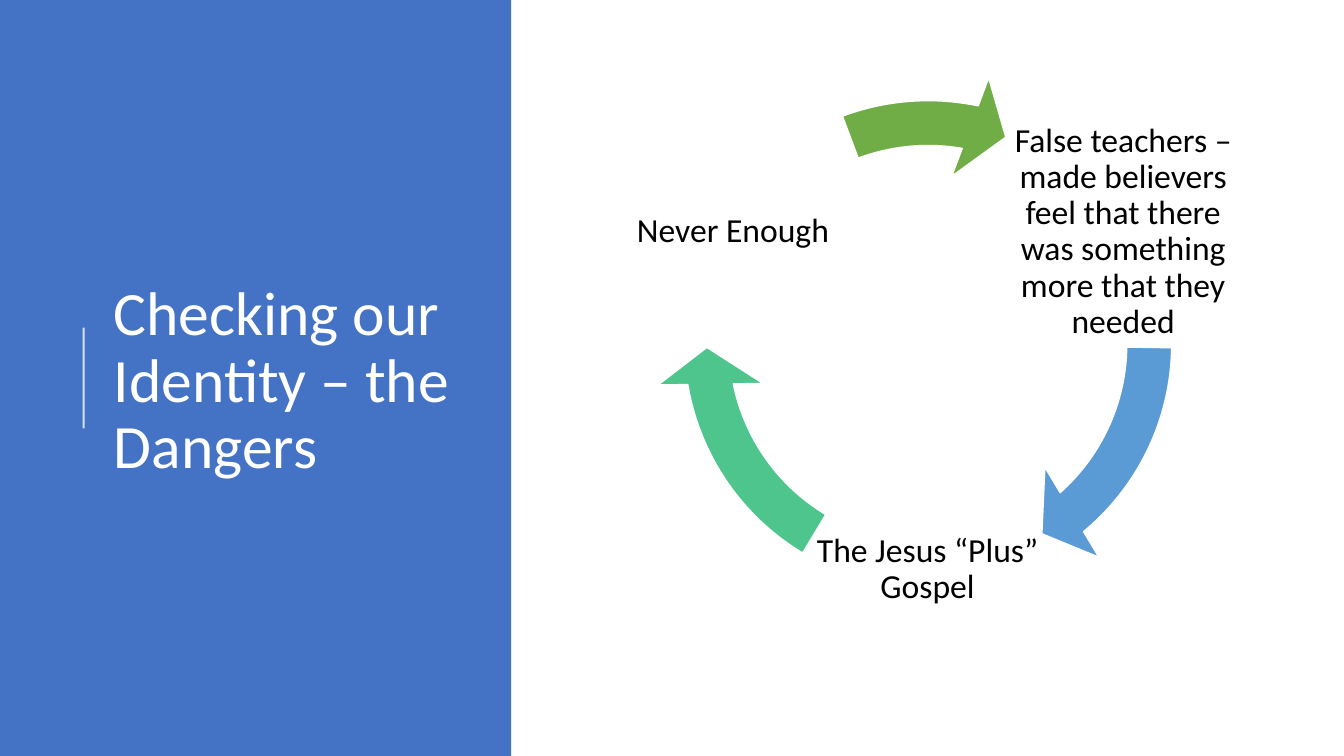
"""Build the slide on the dangers to our identity: a title panel and a three-step cycle."""
from lxml import etree
from pptx import Presentation
from pptx.dml.color import RGBColor
from pptx.enum.shapes import MSO_CONNECTOR, MSO_SHAPE
from pptx.enum.text import MSO_ANCHOR, PP_ALIGN
from pptx.oxml.ns import qn
from pptx.util import Inches, Pt


def color(hex_code):
    return RGBColor.from_string(hex_code)


def add_text(slide, text, left, top, width, height, size, hex_code, align, inset_x, inset_y):
    box = slide.shapes.add_textbox(Inches(left), Inches(top), Inches(width), Inches(height))
    frame = box.text_frame
    frame.word_wrap = True
    frame.vertical_anchor = MSO_ANCHOR.MIDDLE
    frame.margin_left = frame.margin_right = Inches(inset_x)
    frame.margin_top = frame.margin_bottom = Inches(inset_y)
    para = frame.paragraphs[0]
    para.text = text
    para.alignment = align
    para.line_spacing = 0.9
    font = para.runs[0].font
    font.name = "Calibri"
    font.size = Pt(size)
    font.color.rgb = color(hex_code)


deck = Presentation()
deck.slide_width = Inches(13.33)
deck.slide_height = Inches(7.5)
slide = deck.slides.add_slide(deck.slide_layouts[6])

panel = slide.shapes.add_shape(MSO_SHAPE.RECTANGLE, 0, 0, Inches(5.07), Inches(7.5))
panel.shadow.inherit = False
panel.fill.solid()
panel.fill.fore_color.rgb = color("4472C4")
panel.line.fill.background()

add_text(slide, "Checking our Identity – the Dangers", 1.03, 0.78, 3.69, 6.02,
         44, "FFFFFF", PP_ALIGN.LEFT, 0.1, 0.05)

accent = slide.shapes.add_connector(
    MSO_CONNECTOR.STRAIGHT, Inches(0.83), Inches(4.25), Inches(0.83), Inches(3.25))
accent.line.color.rgb = color("FFFFFF")
accent.line.width = Pt(1.5)
etree.SubElement(accent._element.spPr, qn("a:effectLst"))
accent_color = next(accent._element.spPr.iter(qn("a:srgbClr")))
etree.SubElement(accent_color, qn("a:alpha")).set("val", "80000")

steps = [
    ("False teachers – made believers feel that there was something more that they needed",
     9.99, 1.15, "5B9BD5", 29.662, 0.502),
    ("The Jesus “Plus” Gospel", 8.05, 4.5, "4DC58D", 101.742, 72.582),
    ("Never Enough", 6.12, 1.15, "70AD47", 168.589, 149.655),
]
for text, left, top, arrow_fill, head_angle, tail_angle in steps:
    add_text(slide, text, left, top, 2.3, 2.3, 24, "000000", PP_ALIGN.CENTER, 0.03, 0.03)
    arrow = slide.shapes.add_shape(
        MSO_SHAPE.CIRCULAR_ARROW, Inches(6.49), Inches(0.7), Inches(5.43), Inches(5.43))
    arrow.shadow.inherit = False
    for index, value in enumerate((0.082, 5.756, head_angle, tail_angle, 0.096)):
        arrow.adjustments[index] = value
    arrow.fill.solid()
    arrow.fill.fore_color.rgb = color(arrow_fill)
    arrow.line.color.rgb = color("FFFFFF")
    arrow.line.width = Pt(1)

deck.save("out.pptx")
